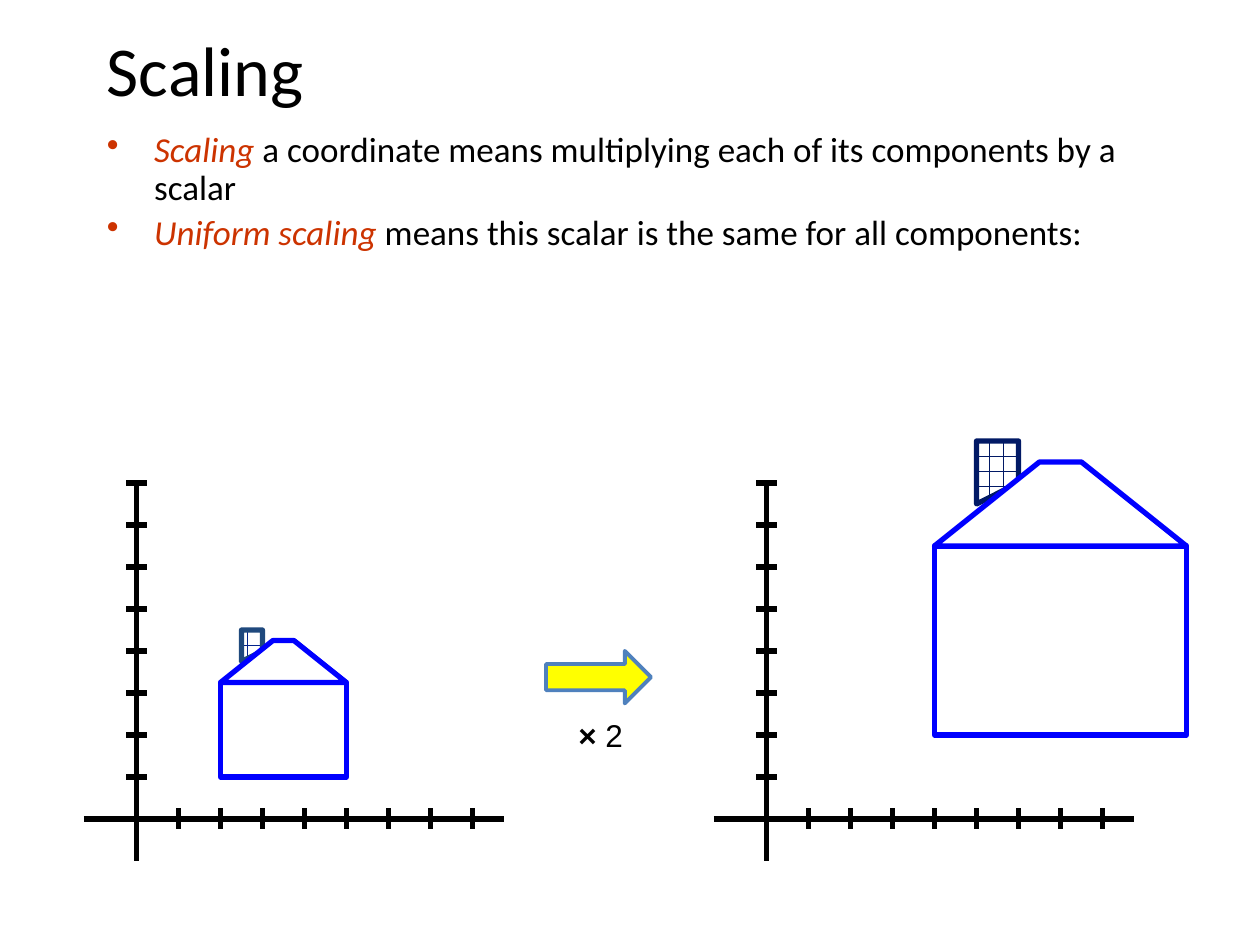
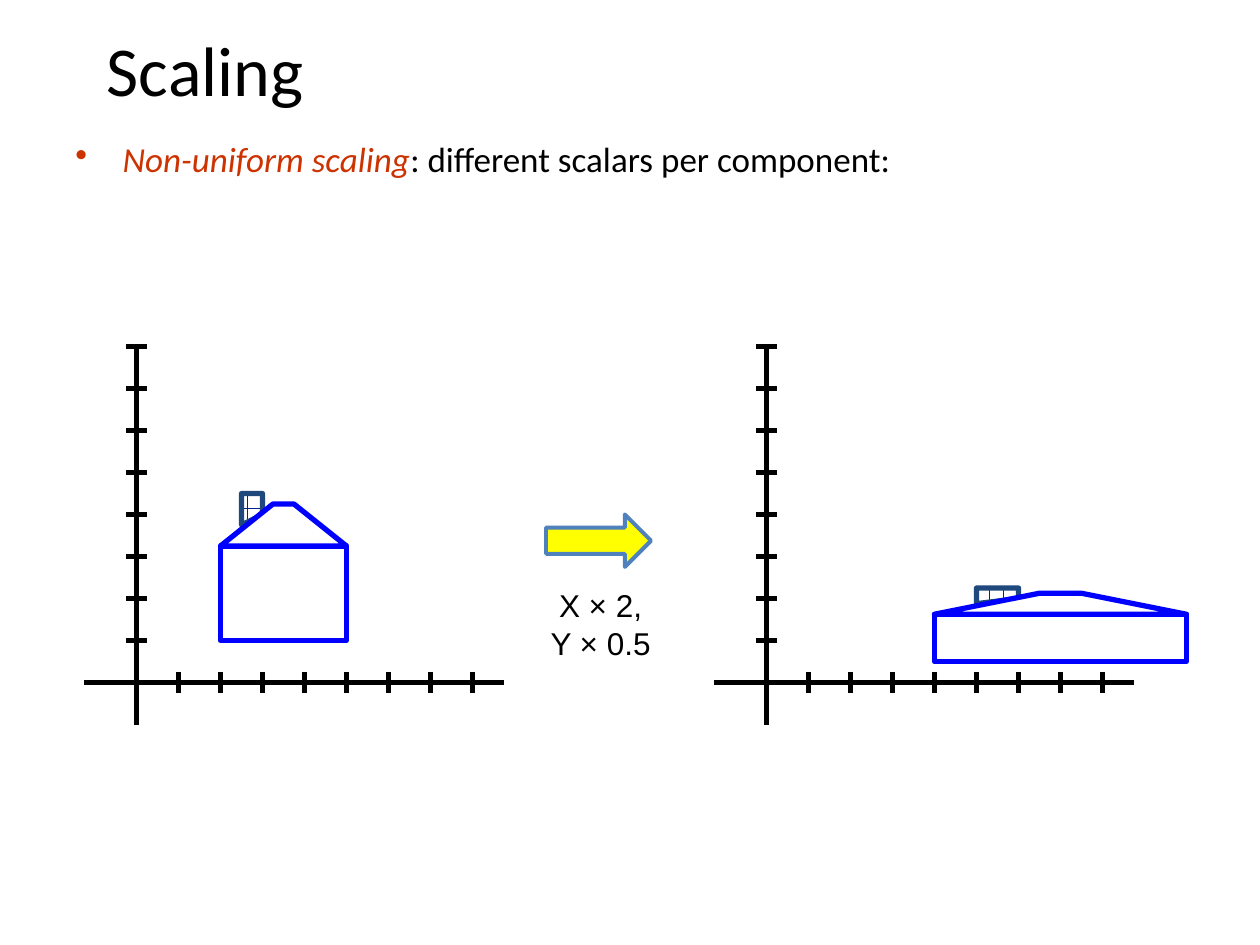
"""Build two slides on uniform and non-uniform scaling of a house drawing."""
from lxml import etree
from pptx import Presentation
from pptx.dml.color import RGBColor
from pptx.enum.dml import MSO_PATTERN
from pptx.enum.shapes import MSO_CONNECTOR, MSO_SHAPE
from pptx.enum.text import MSO_ANCHOR, PP_ALIGN
from pptx.oxml.ns import qn
from pptx.util import Pt

EMU_PER_PX = 7620
BLANK_LAYOUT = 6
STRAIGHT = MSO_CONNECTOR.STRAIGHT
RECTANGLE = MSO_SHAPE.RECTANGLE
RIGHT_ARROW = MSO_SHAPE.RIGHT_ARROW
BRICK = MSO_PATTERN.HORIZONTAL_BRICK
MIDDLE = MSO_ANCHOR.MIDDLE
TOP = MSO_ANCHOR.TOP
CENTER = PP_ALIGN.CENTER

BLACK, WHITE, TERM_RED = "000000", "FFFFFF", "CC3300"
HOUSE_BLUE, ARROW_YELLOW, ARROW_EDGE = "0000FF", "FFFF00", "4F81BD"
BRICK_BLUE, BRICK_EDGE, BRICK_NAVY = "032389", "1F497D", "011965"

UNIT = 40
TICK_COUNT = 8
TICK_HALF = 10
LEFT_ORIGIN, RIGHT_ORIGIN = 130, 730
CHIMNEY = [(100, 150), (100, 180), (120, 180), (120, 160)]
WALLS = [(80, 130), (200, 40)]
ROOF = [(80, 130), (130, 170), (150, 170), (200, 130)]


def px(length):
    """Turn pixels into EMU."""
    return round(length * EMU_PER_PX)


def color(hex_string):
    """Turn a hex string into a colour."""
    return RGBColor.from_string(hex_string)


def style_shape(shape, fill, edge, width=3):
    """Give a shape a solid fill and an outline without shadow."""
    shape.shadow.inherit = False
    shape.fill.solid()
    shape.fill.fore_color.rgb = color(fill)
    shape.line.color.rgb = color(edge)
    shape.line.width = Pt(width)


def add_line(slide, x1, y1, x2, y2):
    """Draw one black axis line or tick."""
    line = slide.shapes.add_connector(STRAIGHT, px(x1), px(y1), px(x2), px(y2))
    line.line.color.rgb = color(BLACK)
    line.line.width = Pt(3)
    etree.SubElement(line._element.spPr, qn("a:effectLst"))


def add_text_frame(slide, left, top, width, height, anchor=TOP, wrap=True):
    """Add an empty text box and return its text frame."""
    box = slide.shapes.add_textbox(px(left), px(top), px(width), px(height))
    box.text_frame.word_wrap = wrap
    box.text_frame.vertical_anchor = anchor
    return box.text_frame


def set_font(paragraph, name, size):
    """Set the shared font of a paragraph."""
    paragraph.font.name = name
    paragraph.font.size = Pt(size)
    paragraph.font.color.rgb = color(BLACK)


def add_title(slide, text):
    """Add the slide title."""
    paragraph = add_text_frame(slide, 90, 10, 1020, 110, MIDDLE).paragraphs[0]
    paragraph.text = text
    set_font(paragraph, "Calibri", 40)


def add_bullets(slide, box, bullets):
    """Add bullets that each open with an emphasised term."""
    frame = add_text_frame(slide, *box)
    for index, (term, explanation) in enumerate(bullets):
        paragraph = frame.add_paragraph() if index else frame.paragraphs[0]
        set_font(paragraph, "Calibri", 20)
        paragraph.line_spacing = 0.9
        paragraph.space_before = Pt(4)
        term_run = paragraph.add_run()
        term_run.text = term
        term_run.font.italic = True
        term_run.font.color.rgb = color(TERM_RED)
        paragraph.add_run().text = explanation
        properties = paragraph._p.get_or_add_pPr()
        properties.set("marL", str(px(45)))
        properties.set("indent", str(px(-45)))
        bullet = etree.Element(qn("a:buChar"), char="•")
        properties.insert(list(properties).index(properties.find(qn("a:defRPr"))), bullet)


def add_axes(slide, x, y):
    """Draw both axes with evenly spaced ticks around an origin."""
    add_line(slide, x, y - TICK_COUNT * UNIT, x, y + UNIT)
    add_line(slide, x - 50, y, x + 350, y)
    for step in range(UNIT, (TICK_COUNT + 1) * UNIT, UNIT):
        add_line(slide, x + step, y - TICK_HALF, x + step, y + TICK_HALF)
        add_line(slide, x - TICK_HALF, y - step, x + TICK_HALF, y - step)


def add_polygon(slide, points):
    """Draw a closed outline."""
    builder = slide.shapes.build_freeform(*points[0], scale=EMU_PER_PX)
    builder.add_line_segments(points[1:], close=True)
    return builder.convert_to_shape()


def add_house(slide, x, y, scale_x=1, scale_y=1, brick=BRICK_BLUE, brick_edge=BRICK_EDGE):
    """Draw the house scaled about an origin."""
    def place(points):
        return [(round(x + across * scale_x), round(y - up * scale_y)) for across, up in points]

    chimney = add_polygon(slide, place(CHIMNEY))
    style_shape(chimney, WHITE, brick_edge)
    chimney.fill.patterned()
    chimney.fill.pattern = BRICK
    chimney.fill.fore_color.rgb = color(brick)
    chimney.fill.back_color.rgb = color(WHITE)
    (left, top), (right, bottom) = place(WALLS)
    walls = slide.shapes.add_shape(RECTANGLE, px(left), px(top), px(right - left), px(bottom - top))
    style_shape(walls, WHITE, HOUSE_BLUE)
    style_shape(add_polygon(slide, place(ROOF)), WHITE, HOUSE_BLUE)


def add_arrow(slide, origin_y):
    """Draw the arrow between the two plots."""
    arrow = slide.shapes.add_shape(RIGHT_ARROW, px(520), px(origin_y - 160), px(100), px(50))
    style_shape(arrow, ARROW_YELLOW, ARROW_EDGE, 2.25)


def add_factor(slide, origin_y, width, height, text, bold_sign=""):
    """Write the scale factor below the arrow."""
    frame = add_text_frame(slide, 572 - width // 2, origin_y - 110, width, height, MIDDLE, False)
    paragraph = frame.paragraphs[0]
    paragraph.text = bold_sign + text if not bold_sign else bold_sign
    if bold_sign:
        paragraph.runs[0].font.bold = True
        paragraph.add_run().text = text
    paragraph.alignment = CENTER
    set_font(paragraph, "Arial", 18)


def add_scaling_slide(presentation, origin_y, bullet_box, bullets, scaled_house):
    """Add a slide that shows the house before and after scaling."""
    slide = presentation.slides.add_slide(presentation.slide_layouts[BLANK_LAYOUT])
    add_title(slide, "Scaling")
    add_bullets(slide, bullet_box, bullets)
    add_axes(slide, LEFT_ORIGIN, origin_y)
    add_house(slide, LEFT_ORIGIN, origin_y)
    add_axes(slide, RIGHT_ORIGIN, origin_y)
    add_house(slide, RIGHT_ORIGIN, origin_y, **scaled_house)
    add_arrow(slide, origin_y)
    return slide


def main():
    """Build and save the presentation."""
    presentation = Presentation()
    presentation.slide_width = px(1200)
    presentation.slide_height = px(900)

    uniform = add_scaling_slide(
        presentation, 780, (90, 120, 1020, 314),
        [("Scaling", " a coordinate means multiplying each of its components by a scalar"),
         ("Uniform scaling", " means this scalar is the same for all components:")],
        {"scale_x": 2, "scale_y": 2, "brick": BRICK_NAVY, "brick_edge": BRICK_NAVY})
    add_factor(uniform, 780, 76, 60, "2", bold_sign="× ")

    non_uniform = add_scaling_slide(
        presentation, 650, (60, 130, 1080, 674),
        [("Non-uniform scaling", ": different scalars per component:")],
        {"scale_x": 2, "scale_y": 0.5})
    add_factor(non_uniform, 650, 128, 108, "X × 2,\vY × 0.5")

    presentation.save("out.pptx")


if __name__ == "__main__":
    main()
